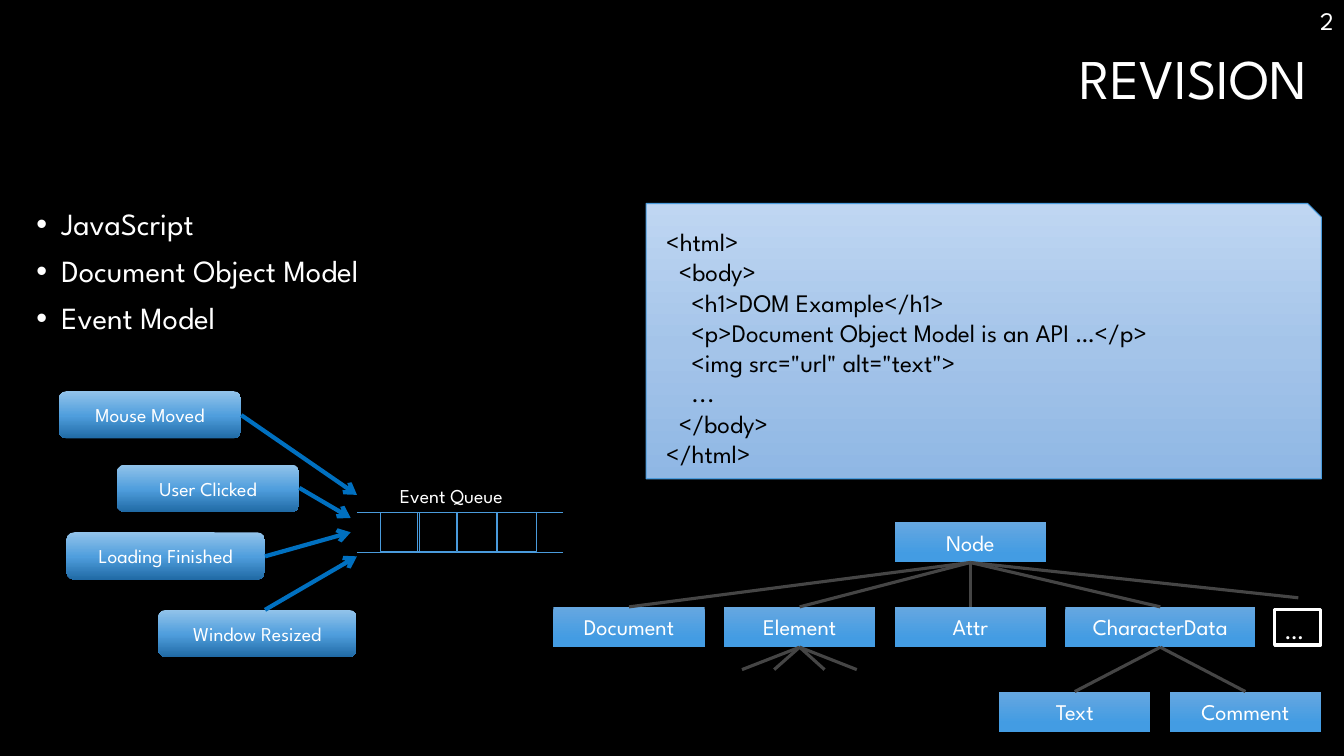
from dataclasses import dataclass

from lxml.etree import SubElement
from pptx import Presentation
from pptx.dml.color import RGBColor
from pptx.enum.shapes import MSO_CONNECTOR, MSO_SHAPE
from pptx.enum.text import MSO_ANCHOR, MSO_AUTO_SIZE, PP_ALIGN
from pptx.oxml import parse_xml
from pptx.oxml.ns import nsdecls, qn
from pptx.util import Pt


@dataclass(frozen=True)
class Theme:
    font: str = "League Spartan"
    back: str = "000000"
    text: str = "FFFFFF"
    code_text: str = "000000"
    outline: str = "4A9BDC"
    branch: str = "454545"
    arrow: str = "0070C0"
    code_fill: tuple = ((0, "BFD6F2"), (52, "A4C4E9"), (100, "8FB7E4"))
    node_fill: tuple = ((0, "66A7E0"), (78, "439CE3"))
    event_fill: tuple = ((0, "92C3EA"), (52, "4F9EDD"), (100, "206AA5"))
    title_size: int = 40
    list_size: int = 22
    code_size: int = 18
    node_size: int = 16
    event_size: int = 14


def apply(obj, **fmt):
    for name, value in fmt.items():
        setattr(obj, name, value)


class Slide:
    def __init__(self, prs, theme):
        self.t = theme
        self.s = prs.slides.add_slide(prs.slide_layouts[1])
        self.s.background.fill.solid()
        self.s.background.fill.fore_color.rgb = RGBColor.from_string(theme.back)

    def add_text(self, sp, lines, size, color=None, frame=None, indents=None, **para):
        """Fill a shape with paragraphs; indents holds (left, first) per line."""
        tf = sp.text_frame
        base = dict(word_wrap=True, auto_size=MSO_AUTO_SIZE.NONE,
                    vertical_anchor=MSO_ANCHOR.TOP)
        apply(tf, **{**base, **(frame or {})})
        for i, line in enumerate(lines):
            p = tf.paragraphs[0] if i == 0 else tf.add_paragraph()
            apply(p, **para)
            if indents:
                left, first = indents[i]
                pPr = p._p.get_or_add_pPr()
                pPr.set("marL", str(Pt(left)))
                pPr.set("indent", str(Pt(first)))
            r = p.add_run()
            r.text = line
            apply(r.font, name=self.t.font, size=Pt(size))
            r.font.color.rgb = RGBColor.from_string(color or self.t.text)

    def placeholder(self, idx, box, lines, size, **fmt):
        sp = self.s.placeholders[idx]
        apply(sp, **dict(zip(("left", "top", "width", "height"), map(Pt, box))))
        self.add_text(sp, lines, size, line_spacing=0.9, **fmt)

    def label(self, box, text, size, frame=None, **para):
        sp = self.s.shapes.add_textbox(*map(Pt, box))
        self.add_text(sp, [text], size, frame=frame, **para)

    def shape(self, kind, box, stops=None, line=None, width=0.75):
        sp = self.s.shapes.add_shape(kind, *map(Pt, box))
        sp.shadow.inherit = False
        sp.fill.background()
        if stops:
            gs = "".join(f'<a:gs pos="{pos * 1000}"><a:srgbClr val="{c}"/></a:gs>'
                         for pos, c in stops)
            spPr = sp.element.spPr
            spPr.replace(spPr.find(qn("a:noFill")), parse_xml(
                f'<a:gradFill {nsdecls("a")} rotWithShape="1"><a:gsLst>{gs}</a:gsLst>'
                '<a:lin ang="5400000" scaled="0"/></a:gradFill>'))
        if line:
            sp.line.color.rgb = RGBColor.from_string(line)
            sp.line.width = Pt(width)
        else:
            sp.line.fill.background()
        return sp

    def box(self, kind, box, text, stops, size):
        sp = self.shape(kind, box, stops)
        self.add_text(sp, [text], size, frame=dict(vertical_anchor=MSO_ANCHOR.MIDDLE),
                      alignment=PP_ALIGN.CENTER)
        return sp

    def line(self, start, end, color, width, arrow=False):
        c = self.s.shapes.add_connector(MSO_CONNECTOR.STRAIGHT, *map(Pt, (*start, *end)))
        c.line.color.rgb = RGBColor.from_string(color)
        c.line.width = Pt(width)
        spPr = c.element.spPr
        if arrow:
            SubElement(spPr.find(qn("a:ln")), qn("a:tailEnd"), type="arrow")
        SubElement(spPr, qn("a:effectLst"))
        return c

    def branch(self, parent, child=None, end=(0, 0)):
        """Join the foot of a node to the head of its child, or to a free end."""
        c = self.line((0, 0), end, self.t.branch, 2.25)
        c.begin_connect(parent, 2)
        if child:
            c.end_connect(child, 0)


def main():
    t = Theme()
    prs = Presentation()
    apply(prs, slide_width=Pt(960), slide_height=Pt(540))
    s = Slide(prs, t)

    # Title, topic list and page number
    s.placeholder(0, (18.7, 33.1, 922.3, 101.5), ["REVISION"], t.title_size,
                  alignment=PP_ALIGN.RIGHT)
    topics = ["JavaScript", "Document Object Model", "Event Model"]
    s.placeholder(1, (18.7, 145.4, 460.8, 196.6), topics, t.list_size,
                  indents=[(18, -18)] * len(topics), space_before=Pt(10),
                  alignment=PP_ALIGN.LEFT)
    s.label((752.4, 0, 207.4, 28.8), "2", t.code_size, alignment=PP_ALIGN.RIGHT)

    # Code sample, indented by nesting depth
    code = [(0, "<html>"), (1, "<body>"), (2, "<h1>DOM Example</h1>"),
            (2, "<p>Document Object Model is an API …</p>"),
            (2, '<img src="url" alt="text">'), (2, "..."),
            (1, "</body>"), (0, "</html>")]
    card = s.shape(MSO_SHAPE.SNIP_1_RECTANGLE, (461.5, 145.4, 482.4, 196.6),
                   t.code_fill, t.outline)
    card.adjustments[0] = 0.05
    s.add_text(card, [text for _, text in code], t.code_size, t.code_text,
               frame=dict(margin_left=Pt(14.4), margin_top=Pt(11.5),
                          margin_right=Pt(14.4), margin_bottom=Pt(14.4)),
               indents=[(9 * depth, 0) for depth, _ in code], alignment=PP_ALIGN.LEFT)

    # Node tree: name -> (left, row, width, parent)
    left, step, node_w, node_h = 395.3, 121.9, 108, 28.8
    tree = {"Node": (left + 2 * step, 0, node_w, None),
            "Document": (left, 1, node_w, "Node"),
            "Element": (left + step, 1, node_w, "Node"),
            "Attr": (left + 2 * step, 1, node_w, "Node"),
            "CharacterData": (left + 3 * step, 1, 135.6, "Node"),
            "Text": (713.7, 2, node_w, "CharacterData"),
            "Comment": (713.7 + step, 2, node_w, "CharacterData")}
    nodes = {}
    for name, (x, row, w, parent) in tree.items():
        nodes[name] = s.box(MSO_SHAPE.RECTANGLE, (x, 373 + 60.5 * row, w, node_h),
                            name, t.node_fill, t.node_size)
        if parent:
            s.branch(nodes[parent], nodes[name])
    s.branch(nodes["Node"], end=(927.4, 427))
    for x in (530, 553, 589, 612):
        s.branch(nodes["Element"], end=(x, 478.3))
    more = s.shape(MSO_SHAPE.RECTANGLE, (910.5, 435.3, 32.8, 25.5), None, t.text, 2.25)
    s.add_text(more, ["…"], t.code_size, frame=dict(word_wrap=False),
               alignment=PP_ALIGN.LEFT)

    # Event queue
    for x in (271.5, 298.2, 327, 355):
        s.shape(MSO_SHAPE.RECTANGLE, (x, 365.8, 28.1, 28.1), None, t.outline)
    for y in (365.8, 394.5):
        s.line((255, y), (402, y), t.outline, 0.75)
    s.label((278.6, 342, 100, 24.5), "Event Queue", t.event_size,
            frame=dict(word_wrap=False))

    # Events: text, left, top, width, arrow start, arrow end
    events = [("Mouse Moved", 42, 279.4, 130.3, (172.3, 296.5), (255, 353.5)),
              ("User Clicked", 83.5, 331.9, 130.3, (213.8, 348.5), (250.5, 370)),
              ("Loading Finished", 47.5, 380.2, 141.8, (189.3, 397.4), (250.5, 380.2)),
              ("Window Resized", 113, 435.6, 141.8, (189.3, 435.6), (255, 397.4))]
    for text, x, y, w, start, end in events:
        s.box(MSO_SHAPE.ROUNDED_RECTANGLE, (x, y, w, 33.8), text,
              t.event_fill, t.event_size)
        s.line(start, end, t.arrow, 3, arrow=True)

    prs.save("out.pptx")


if __name__ == "__main__":
    main()
